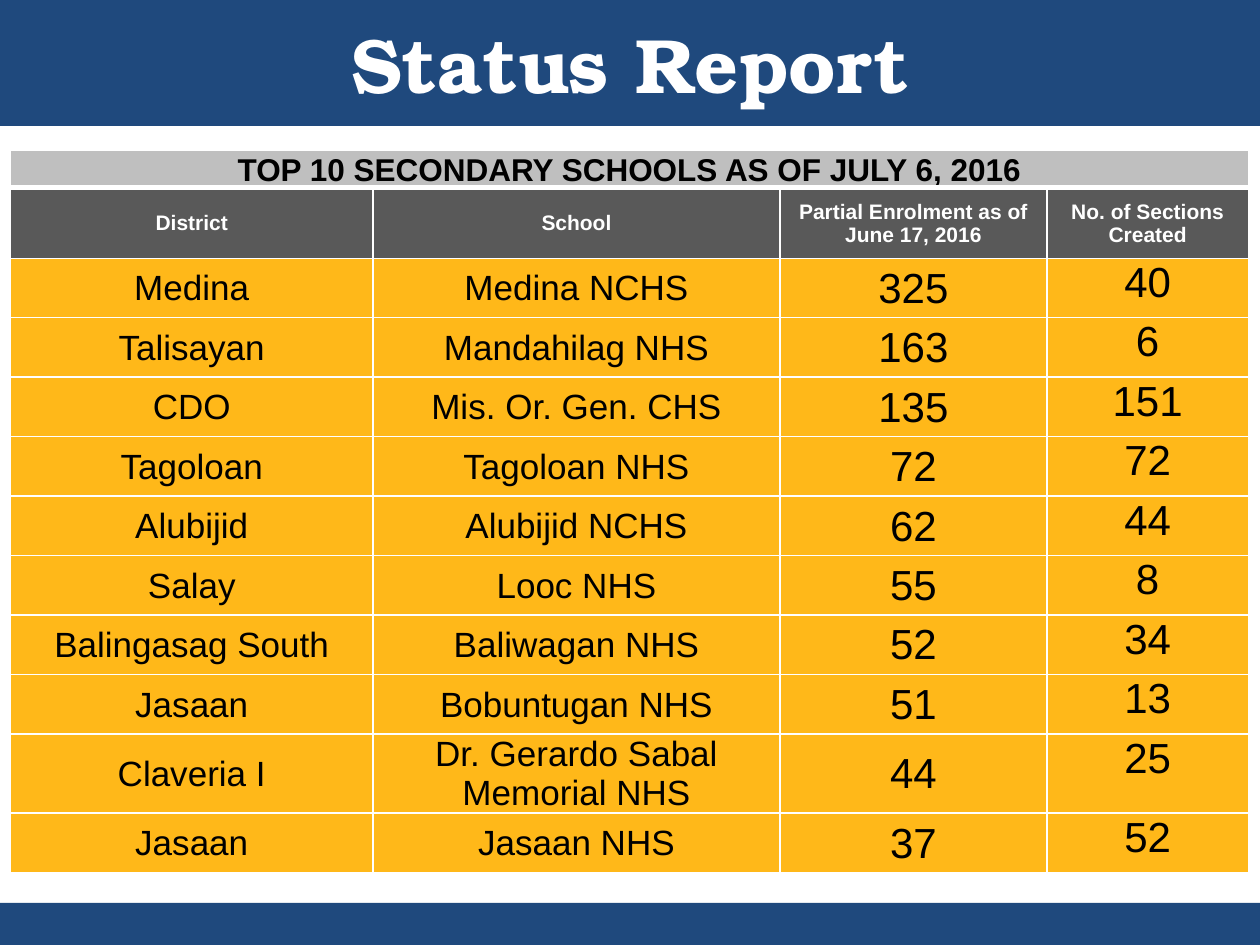
from dataclasses import dataclass

from lxml.etree import SubElement
from pptx import Presentation
from pptx.dml.color import RGBColor
from pptx.enum.shapes import MSO_SHAPE
from pptx.enum.text import MSO_ANCHOR, MSO_AUTO_SIZE, PP_ALIGN
from pptx.oxml.ns import qn
from pptx.util import Emu, Pt

SCALE = 914400 / 252
WIDE, HIGH = 2520, 1890
COLORS = {
    "navy": "1F497D",
    "white": "FFFFFF",
    "black": "000000",
    "silver": "BFBFBF",
    "gray": "595959",
    "gold": "FFB819",
}
COLS = [725, 814, 534, 403]
ROWS = [70, 141] + [119] * 10
BANNER = "TOP 10 SECONDARY SCHOOLS AS OF JULY 6, 2016"
HEADS = ["District", "School", "Partial Enrolment as of June 17, 2016", "No. of Sections Created"]
SCHOOLS = [
    ("Medina", "Medina NCHS", 325, 40),
    ("Talisayan", "Mandahilag NHS", 163, 6),
    ("CDO", "Mis. Or. Gen. CHS", 135, 151),
    ("Tagoloan", "Tagoloan NHS", 72, 72),
    ("Alubijid", "Alubijid NCHS", 62, 44),
    ("Salay", "Looc NHS", 55, 8),
    ("Balingasag South", "Baliwagan NHS", 52, 34),
    ("Jasaan", "Bobuntugan NHS", 51, 13),
    ("Claveria I", "Dr. Gerardo Sabal Memorial NHS", 44, 25),
    ("Jasaan", "Jasaan NHS", 37, 52),
]


@dataclass(frozen=True)
class Bar:
    top: int
    high: int


@dataclass(frozen=True)
class Look:
    size: int
    fill: str
    ink: str = "black"
    bold: bool = False
    anchor: MSO_ANCHOR = MSO_ANCHOR.MIDDLE
    inset: tuple = (2, 2, 2, 0)
    above: int = 1
    below: int = 1


TITLE = Bar(0, 252)
FOOT = Bar(1806, 84)
TOP = Look(18, "silver", bold=True, inset=(18, 0, 18, 0), below=3)
HEAD = Look(12, "gray", "white", True, above=3)
NAME = Look(20, "gold")
COUNT = Look(24, "gold")
LAST = Look(24, "gold", anchor=MSO_ANCHOR.TOP)


def px(value: int) -> Emu:
    return Emu(round(value * SCALE))


def color(name: str) -> RGBColor:
    return RGBColor.from_string(COLORS[name])


def draw_bar(slide, bar: Bar) -> None:
    shape = slide.shapes.add_shape(MSO_SHAPE.RECTANGLE, 0, px(bar.top), px(WIDE), px(bar.high))
    shape.shadow.inherit = False
    shape.fill.solid()
    shape.fill.fore_color.rgb = color("navy")
    shape.line.fill.background()


def set_font(part, face: str, size: int, ink: str, bold: bool) -> None:
    part.alignment = PP_ALIGN.CENTER
    for run in part.runs:
        run.font.name = face
        run.font.size = Pt(size)
        run.font.bold = bold
        run.font.color.rgb = color(ink)


def draw_title(slide) -> None:
    title = slide.shapes.title
    title.left, title.top, title.width, title.height = 0, 0, px(WIDE), px(TITLE.high)
    frame = title.text_frame
    frame.text = "Status Report"
    frame.auto_size = MSO_AUTO_SIZE.NONE
    frame.vertical_anchor = MSO_ANCHOR.MIDDLE
    set_font(frame.paragraphs[0], "TeX Gyre Bonum", 44, "white", True)
    title.element.getparent().append(title.element)


def edge(cell, look: Look) -> None:
    props = cell._tc.get_or_add_tcPr()
    for tag, width in (("lnL", 1), ("lnR", 1), ("lnT", look.above), ("lnB", look.below)):
        line = SubElement(props, qn(f"a:{tag}"), w=str(Pt(width)))
        fill = SubElement(line, qn("a:solidFill"))
        SubElement(fill, qn("a:srgbClr"), val=COLORS["white"])


def draw_cell(cell, text: str, look: Look) -> None:
    edge(cell, look)
    cell.fill.solid()
    cell.fill.fore_color.rgb = color(look.fill)
    cell.vertical_anchor = look.anchor
    cell.margin_left, cell.margin_top, cell.margin_right, cell.margin_bottom = map(px, look.inset)
    cell.text_frame.text = text
    set_font(cell.text_frame.paragraphs[0], "Arial", look.size, look.ink, look.bold)


def draw_table(slide) -> None:
    frame = slide.shapes.add_table(
        len(ROWS), len(COLS), px(21), px(300), px(sum(COLS)), px(sum(ROWS))
    )
    table = frame.table
    table.first_row = table.horz_banding = False
    for col, width in zip(table.columns, COLS):
        col.width = px(width)
    for row, height in zip(table.rows, ROWS):
        row.height = px(height)
    table.cell(0, 0).merge(table.cell(0, len(COLS) - 1))
    lines = [(BANNER, "", "", ""), HEADS, *SCHOOLS]
    looks = [[TOP] * 4, [HEAD] * 4] + [[NAME, NAME, COUNT, LAST]] * len(SCHOOLS)
    for row, (line, styles) in enumerate(zip(lines, looks)):
        for col, (value, look) in enumerate(zip(line, styles)):
            draw_cell(table.cell(row, col), str(value), look)
    table.cell(0, 0).text_frame.paragraphs[0].line_spacing = 1.07


def main() -> None:
    deck = Presentation()
    deck.slide_width, deck.slide_height = px(WIDE), px(HIGH)
    slide = deck.slides.add_slide(deck.slide_layouts[5])
    for bar in (FOOT, TITLE):
        draw_bar(slide, bar)
    draw_title(slide)
    draw_table(slide)
    deck.save("out.pptx")


if __name__ == "__main__":
    main()
